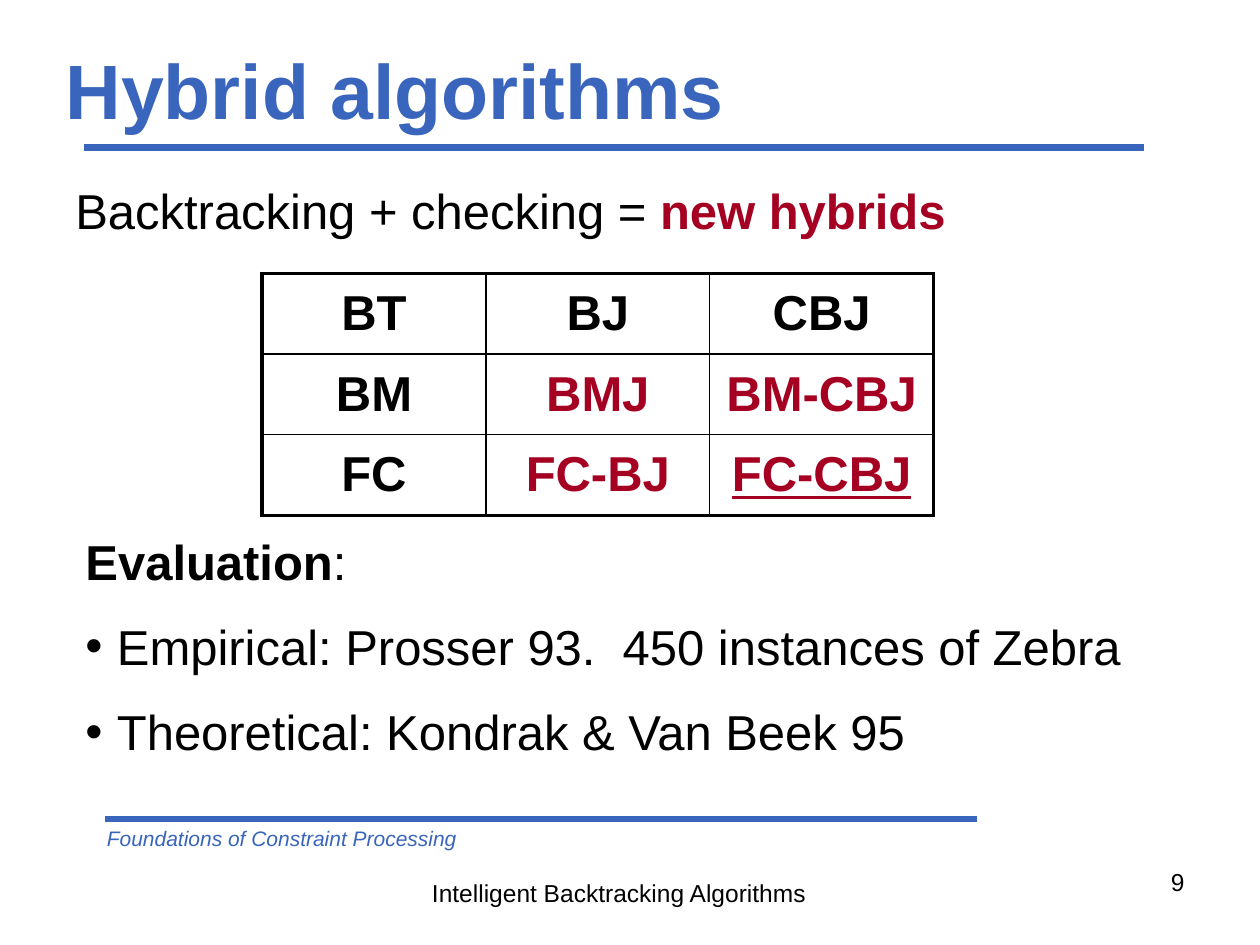
from lxml import etree
from pptx import Presentation
from pptx.dml.color import RGBColor
from pptx.enum.shapes import MSO_CONNECTOR as CONN
from pptx.enum.text import MSO_ANCHOR as ANCHOR, MSO_AUTO_SIZE as FIT, PP_ALIGN as ALIGN
from pptx.oxml.ns import qn
from pptx.util import Inches, Pt

BLUE, RED, BLACK = "3A65BC", "A50021", "000000"


def add_run(p, text, size=28, color=BLACK, bold=False, italic=False, underline=False):
    r = p.add_run()
    r.text = text
    r.font.name, r.font.size = "Arial", Pt(size)
    r.font.bold, r.font.italic, r.font.underline = bold, italic, underline
    r.font.color.rgb = RGBColor.from_string(color)


def add_text(text, box, wrap=True, align=ALIGN.LEFT, **fmt):
    tf = s.shapes.add_textbox(*map(Inches, box)).text_frame
    tf.word_wrap = wrap
    p = tf.paragraphs[0]
    p.alignment = align
    add_run(p, text, **fmt)
    return tf


prs = Presentation()
prs.slide_width, prs.slide_height = Inches(10), Inches(7.5)
s = prs.slides.add_slide(prs.slide_layouts[5])

title = s.shapes.title
title.left, title.top, title.width, title.height = map(Inches, (0.42, 0.33, 9, 0.75))
tf = title.text_frame
tf.auto_size, tf.vertical_anchor = FIT.NONE, ANCHOR.MIDDLE
tf.paragraphs[0].alignment = ALIGN.LEFT
add_run(tf.paragraphs[0], "Hybrid algorithms", size=44, color=BLUE, bold=True)

for x1, x2, y in [(0.67, 9.08, 1.17), (0.83, 7.75, 6.5)]:
    rule = s.shapes.add_connector(CONN.STRAIGHT, *map(Inches, (x1, y, x2, y)))
    rule.line.color.rgb = RGBColor.from_string(BLUE)
    rule.line.width = Pt(4)
    etree.SubElement(rule.line._get_or_add_ln().getparent(), qn("a:effectLst"))

add_text("Foundations of Constraint Processing", (0.75, 6.5, 5.25, 0.3),
         size=12, color=BLUE, italic=True)
add_text("Intelligent Backtracking Algorithms", (3.33, 6.92, 3.19, 0.34), wrap=False, size=14)
add_text("9", (7.17, 6.83, 2.33, 0.52), align=ALIGN.RIGHT, size=14)

tf = add_text("Backtracking + checking = ", (0.5, 1.38, 9.17, 0.6))
add_run(tf.paragraphs[0], "new hybrids", color=RED, bold=True)

rows = [["BT", "BJ", "CBJ"], ["BM", "BMJ", "BM-CBJ"], ["FC", "FC-BJ", "FC-CBJ"]]
n = len(rows)
table = s.shapes.add_table(n, n, *map(Inches, (2.08, 2.17, 5.33, 1.92))).table
for i, row in enumerate(rows):
    table.rows[i].height = Inches(1.92 / n)
    for j, text in enumerate(row):
        cell = table.cell(i, j)
        cell.vertical_anchor = ANCHOR.MIDDLE
        p = cell.text_frame.paragraphs[0]
        p.alignment = ALIGN.CENTER
        add_run(p, text, color=RED if i and j else BLACK, bold=True,
                underline=text == "FC-CBJ")
        tcPr = cell._tc.get_or_add_tcPr()
        edges = {"lnL": j == 0, "lnR": j == n - 1, "lnT": i == 0, "lnB": i == n - 1}
        for tag, outer in edges.items():
            ln = etree.SubElement(tcPr, qn(f"a:{tag}"), w=str(Pt(2.25 if outer else 1)))
            fill = etree.SubElement(ln, qn("a:solidFill"))
            etree.SubElement(fill, qn("a:srgbClr"), val=BLACK)
        cell.fill.background()

tf = add_text("Evaluation", (0.58, 4.17, 9, 1.97), bold=True)
add_run(tf.paragraphs[0], ":")
for text in ["Empirical: Prosser 93.  450 instances of Zebra",
             "Theoretical: Kondrak & Van Beek 95"]:
    p = tf.add_paragraph()
    p.space_before = Pt(15)
    pPr = p._p.get_or_add_pPr()
    pPr.set("marL", str(Inches(0.25)))
    pPr.set("indent", str(Inches(-0.25)))
    etree.SubElement(pPr, qn("a:buFont"), typeface="Arial")
    etree.SubElement(pPr, qn("a:buChar"), char="•")
    add_run(p, text)

prs.save("out.pptx")
